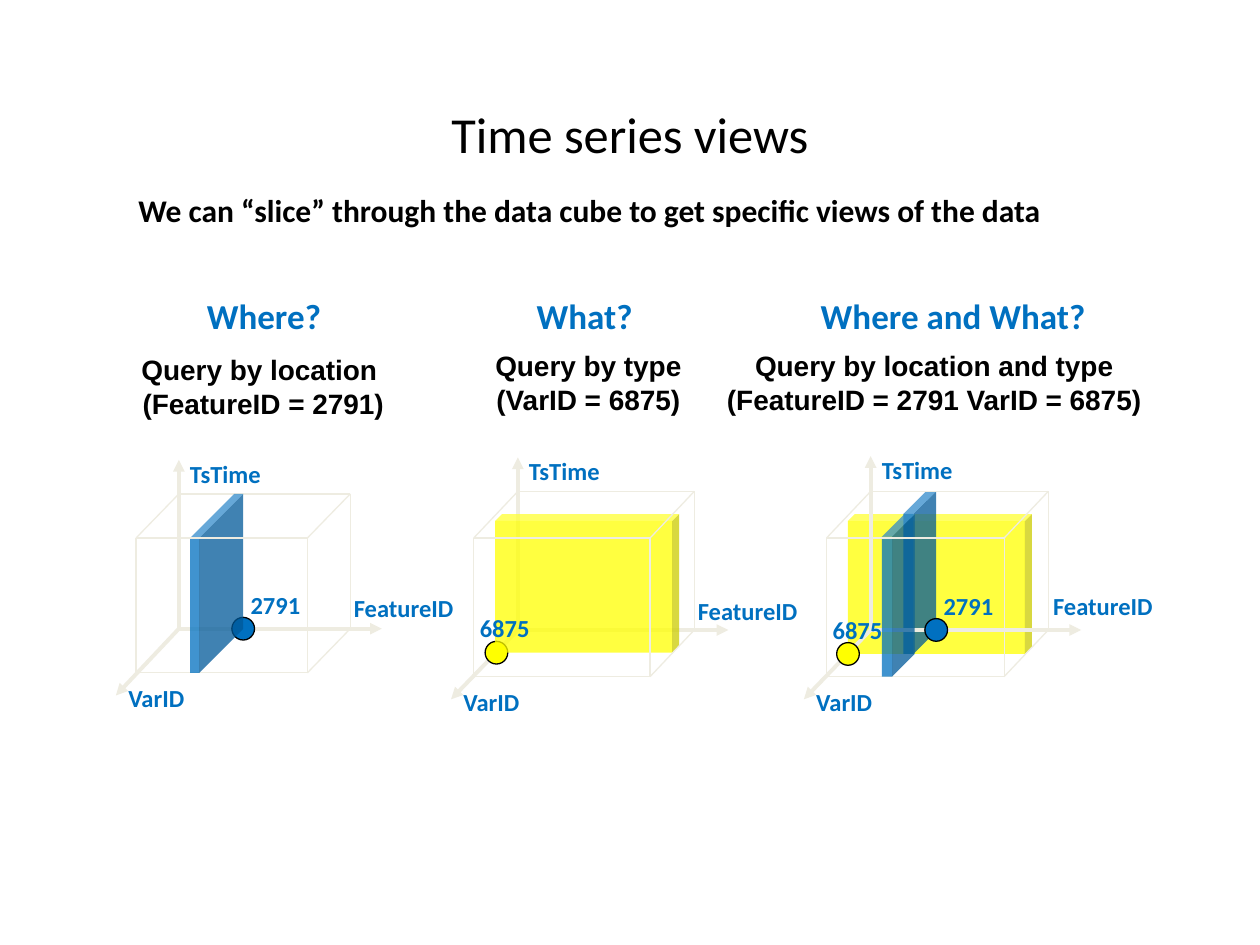
from dataclasses import dataclass

from lxml import etree
from pptx import Presentation
from pptx.dml.color import RGBColor
from pptx.enum.shapes import MSO_CONNECTOR, MSO_SHAPE
from pptx.enum.text import MSO_ANCHOR, MSO_AUTO_SIZE, PP_ALIGN
from pptx.oxml.ns import qn
from pptx.util import Emu, Pt

STRAIGHT = MSO_CONNECTOR.STRAIGHT
CUBE, OVAL = MSO_SHAPE.CUBE, MSO_SHAPE.OVAL
LEFT, CENTER = PP_ALIGN.LEFT, PP_ALIGN.CENTER
MIDDLE, GROW = MSO_ANCHOR.MIDDLE, MSO_AUTO_SIZE.SHAPE_TO_FIT_TEXT

BLUE = RGBColor(0x00, 0x70, 0xC0)
YELLOW = RGBColor(0xFF, 0xFF, 0x00)
GRID = RGBColor(0xEE, 0xEC, 0xE1)
BLACK = RGBColor(0x00, 0x00, 0x00)

EMU_PER_PX = 9144  # 100 px to the inch
DOT = 18
LABEL_HEIGHT = 34

Point = tuple[int, int]
Box = tuple[int, int, int, int]


@dataclass(frozen=True)
class Slab:
    box: Box
    color: RGBColor
    depth: float


@dataclass(frozen=True)
class Marker:
    center: Point
    color: RGBColor
    text: str
    label_dx: int


@dataclass(frozen=True)
class View:
    heading: str
    heading_box: Box
    query: tuple[str, str]
    query_box: Box
    origin: Point
    size: Point
    depth: Point
    feature_tip: int
    time_tip: int
    variable_tip: Point
    feature_label: Point
    markers: tuple[Marker, ...]
    front_slabs: tuple[Slab, ...]
    back_slabs: tuple[Slab, ...] = ()


VIEWS = (
    View("Where?", (148, 229, 123, 44),
         ("Query by location ", "(FeatureID = 2791)"), (101, 275, 216, 64),
         origin=(142, 499), size=(136, 107), depth=(34, 35),
         feature_tip=303, time_tip=365, variable_tip=(92, 552),
         feature_label=(271, 466),
         markers=(Marker((193, 499), BLUE, "2791", -4),),
         front_slabs=(Slab((151, 392, 42, 142), BLUE, 0.83),)),
    View("What?", (411, 229, 106, 44),
         ("Query by type", "(VarID = 6875)"), (382, 272, 170, 64),
         origin=(411, 500), size=(140, 110), depth=(35, 37),
         feature_tip=578, time_tip=363, variable_tip=(358, 555),
         feature_label=(544, 468),
         markers=(Marker((394, 518), YELLOW, "6875", -23),),
         front_slabs=(Slab((393, 408, 146, 110), YELLOW, 0.05),)),
    View("Where and What?", (628, 229, 257, 44),
         ("Query by location and type", "(FeatureID = 2791 VarID = 6875)"),
         (565, 272, 353, 64),
         origin=(691, 500), size=(141, 110), depth=(35, 37),
         feature_tip=858, time_tip=362, variable_tip=(638, 555),
         feature_label=(826, 464),
         markers=(Marker((743, 500), BLUE, "2791", -4),
                  Marker((673, 519), YELLOW, "6875", -22)),
         front_slabs=(Slab((700, 408, 26, 129), BLUE, 0.69),),
         back_slabs=(Slab((673, 408, 146, 111), YELLOW, 0.05),
                     Slab((717, 390, 26, 129), BLUE, 0.69))),
)


def px(value: int) -> Emu:
    return Emu(value * EMU_PER_PX)


def add_text(slide, lines: tuple[str, ...], box: Box, size: float, color: RGBColor,
             font: str = "Calibri", bold: bool = True, align=CENTER, wrap: bool = False):
    frame = slide.shapes.add_textbox(*map(px, box)).text_frame
    frame.word_wrap = wrap
    if not wrap:
        frame.auto_size = GROW
    for index, line in enumerate(lines):
        paragraph = frame.paragraphs[0] if index == 0 else frame.add_paragraph()
        paragraph.text = line
        paragraph.alignment = align
        paragraph.font.name = font
        paragraph.font.size = Pt(size)
        paragraph.font.bold = bold
        paragraph.font.color.rgb = color
    return frame


def add_label(slide, text: str, left: int, top: int, width: int) -> None:
    add_text(slide, (text,), (left, top, width, LABEL_HEIGHT), 14, BLUE, align=LEFT)


def add_line(slide, start: Point, end: Point, arrow: bool = False) -> None:
    line = slide.shapes.add_connector(STRAIGHT, *map(px, start + end))
    line.line.color.rgb = GRID
    line.line.width = Pt(2.25 if arrow else 0.75)
    if arrow:
        etree.SubElement(line.line._get_or_add_ln(), qn("a:tailEnd"), type="triangle")
    etree.SubElement(line._element.spPr, qn("a:effectLst"))


def add_slab(slide, slab: Slab) -> None:
    shape = slide.shapes.add_shape(CUBE, *map(px, slab.box))
    shape.adjustments[0] = slab.depth
    shape.shadow.inherit = False
    shape.fill.solid()
    shape.fill.fore_color.rgb = slab.color
    color = shape._element.spPr.find(".//" + qn("a:srgbClr"))
    etree.SubElement(color, qn("a:alpha"), val="75000")
    shape.line.fill.background()


def add_dot(slide, marker: Marker) -> None:
    x, y = marker.center
    shape = slide.shapes.add_shape(OVAL, *map(px, (x - DOT // 2, y - DOT // 2, DOT, DOT)))
    shape.shadow.inherit = False
    shape.fill.solid()
    shape.fill.fore_color.rgb = marker.color
    shape.line.color.rgb = BLACK
    shape.line.width = Pt(0.75)


def add_view(slide, view: View) -> None:
    add_text(slide, view.query, view.query_box, 16, BLACK, font="Arial")
    add_text(slide, (view.heading,), view.heading_box, 20, BLUE)

    # Corners of the data cube
    x, y = view.origin
    right, top = x + view.size[0], y - view.size[1]
    dx, dy = view.depth
    back_top_left, back_top_right, back_right = (x, top), (right, top), (right, y)
    front_top_left, front_top_right = (x - dx, top + dy), (right - dx, top + dy)
    front_left, front_right = (x - dx, y + dy), (right - dx, y + dy)

    # Slabs behind the axes, then axes and hidden edges
    for slab in view.back_slabs:
        add_slab(slide, slab)
    for tip in ((view.feature_tip, y), view.variable_tip, (x, view.time_tip)):
        add_line(slide, view.origin, tip, arrow=True)
    for start, end in ((back_top_left, back_top_right), (front_left, front_right),
                       (front_top_left, front_left)):
        add_line(slide, start, end)

    # Markers, front slabs and near edges
    for marker in view.markers:
        add_dot(slide, marker)
    for slab in view.front_slabs:
        add_slab(slide, slab)
    for start, end in ((front_top_right, front_right), (back_top_right, front_top_right),
                       (back_top_left, front_top_left), (front_top_left, front_top_right),
                       (back_top_right, back_right), (back_right, front_right)):
        add_line(slide, start, end)

    # Labels
    add_label(slide, "TsTime", x - 1, view.time_tip - 6, 87)
    add_label(slide, "FeatureID", *view.feature_label, 110)
    add_label(slide, "VarID", view.variable_tip[0], view.variable_tip[1] - 15, 70)
    for marker in view.markers:
        add_label(slide, marker.text, marker.center[0] + marker.label_dx,
                  marker.center[1] - 36, 64)


def main() -> None:
    presentation = Presentation()
    presentation.slide_width, presentation.slide_height = px(1000), px(750)
    slide = presentation.slides.add_slide(presentation.slide_layouts[6])

    # Title and introduction
    title = add_text(slide, ("Time series views",), (100, 79, 800, 53), 28.8, BLACK,
                     bold=False, wrap=True)
    title.vertical_anchor = MIDDLE
    introduction = add_text(
        slide, ("We can “slice” through the data cube to get specific views of the data",),
        (100, 151, 800, 82), 18, BLACK, align=LEFT, wrap=True)
    introduction.paragraphs[0].line_spacing = 0.85

    for view in VIEWS:
        add_view(slide, view)
    presentation.save("out.pptx")


if __name__ == "__main__":
    main()
